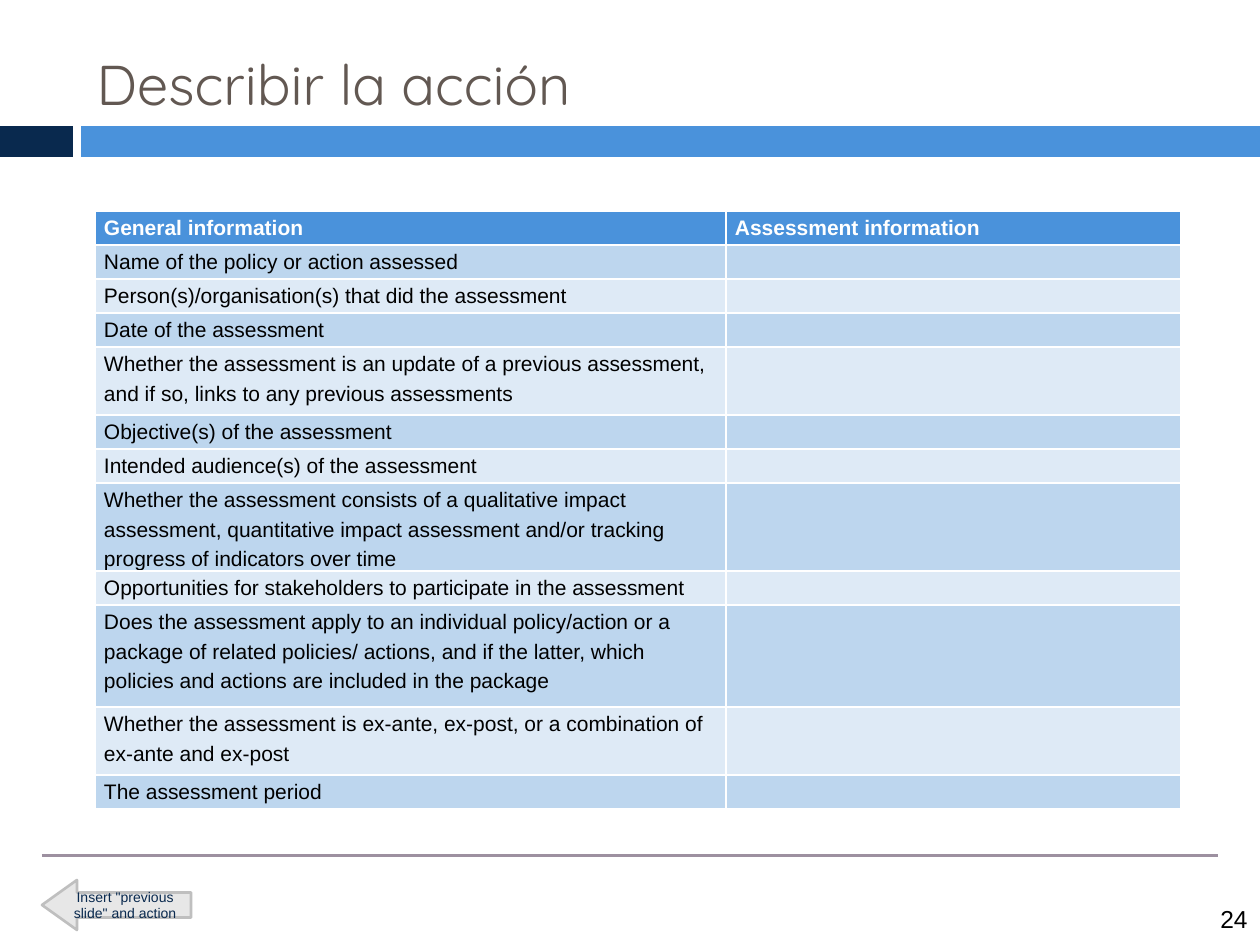
from dataclasses import dataclass

from lxml import etree
from pptx import Presentation, util as u
from pptx.dml.color import RGBColor
from pptx.enum import shapes, text
from pptx.oxml.ns import qn

SCALE = u.Inches(1) / 126
ROW = 34


@dataclass(frozen=True)
class Theme:
    """Colours, fonts and type sizes of the deck."""
    navy: str = "09294E"
    blue: str = "4A92DB"
    bands: tuple = ("BDD6EE", "DEEAF6")
    white: str = "FFFFFF"
    black: str = "000000"
    title: str = "625852"
    rule: str = "9D90A0"
    arrow: str = "E7E7E7"
    arrow_line: str = "BFBFBF"
    head_font: str = "Quicksand"
    body_font: str = "Arial"
    title_size: int = 32
    number_size: int = 14
    table_size: int = 12
    button_size: int = 8


THEME = Theme()
HEADER = ("General information", "Assessment information")
QUESTIONS = [
    ("Name of the policy or action assessed", 1),
    ("Person(s)/organisation(s) that did the assessment", 1),
    ("Date of the assessment", 1),
    ("Whether the assessment is an update of a previous assessment, "
     "and if so, links to any previous assessments", 2),
    ("Objective(s) of the assessment", 1),
    ("Intended audience(s) of the assessment", 1),
    ("Whether the assessment consists of a qualitative impact assessment, "
     "quantitative impact assessment and/or tracking progress of indicators over time", 2),
    ("Opportunities for stakeholders to participate in the assessment", 1),
    ("Does the assessment apply to an individual policy/action or a package of related "
     "policies/ actions, and if the latter, which policies and actions are included "
     "in the package", 3),
    ("Whether the assessment is ex-ante, ex-post, or a combination of "
     "ex-ante and ex-post", 2),
    ("The assessment period", 1),
]


def px(n):
    """Turn pixels into EMU."""
    return u.Emu(round(n * SCALE))


def rgb(value):
    """Turn a hex string into a colour."""
    return RGBColor.from_string(value)


def set_all(obj, **values):
    """Set each given attribute on an object."""
    for name, value in values.items():
        setattr(obj, name, value)


def write(tf, words, size, color, font=THEME.body_font, bold=False, **para):
    """Write one formatted paragraph into a text frame."""
    p = tf.paragraphs[0]
    set_all(p, **para)
    r = p.add_run()
    r.text = words
    set_all(r.font, size=u.Pt(size), name=font, bold=bold)
    r.font.color.rgb = rgb(color)


def add_block(slide, kind, box, fill, line=None):
    """Add a filled preset shape."""
    sp = slide.shapes.add_shape(kind, *map(px, box))
    sp.shadow.inherit = False
    sp.fill.solid()
    sp.fill.fore_color.rgb = rgb(fill)
    if line:
        sp.line.color.rgb = rgb(line)
        sp.line.width = u.Pt(1.5)
    else:
        sp.line.fill.background()
    return sp


def add_band(slide, box):
    """Add the two-part band under the title."""
    x, y, w, h = box
    tab, gap = 73, 8
    rect = shapes.MSO_SHAPE.RECTANGLE
    add_block(slide, rect, (x, y, tab, h), THEME.navy)
    add_block(slide, rect, (x + tab + gap, y, w - tab - gap, h), THEME.blue)


def add_title(slide, box, words):
    """Place and format the title placeholder."""
    sp = slide.shapes.title
    set_all(sp, **dict(zip(("left", "top", "width", "height"), map(px, box))))
    set_all(sp.text_frame, word_wrap=True, vertical_anchor=text.MSO_ANCHOR.MIDDLE)
    write(sp.text_frame, words, THEME.title_size, THEME.title, THEME.head_font,
          alignment=text.PP_ALIGN.LEFT, line_spacing=0.9)


def set_borders(cell):
    """Give a cell thin white borders on all sides."""
    pr = cell._tc.get_or_add_tcPr()
    for side in ("lnL", "lnR", "lnT", "lnB"):
        ln = etree.SubElement(pr, qn(f"a:{side}"), w=str(u.Pt(1)))
        fill = etree.SubElement(ln, qn("a:solidFill"))
        etree.SubElement(fill, qn("a:srgbClr"), val=THEME.white)


def fill_cell(cell, words, fill, color, bold):
    """Fill and write one table cell."""
    set_all(cell, margin_left=px(9), margin_right=px(9), margin_top=0, margin_bottom=0)
    set_borders(cell)
    cell.fill.solid()
    cell.fill.fore_color.rgb = rgb(fill)
    if words:
        write(cell.text_frame, words, THEME.table_size, color, bold=bold,
              line_spacing=1.25, space_after=u.Pt(2))
    else:
        etree.SubElement(cell.text_frame.paragraphs[0]._p, qn("a:endParaRPr"),
                         sz=str(THEME.table_size * 100))


def add_form(slide, box):
    """Add the two-column assessment table."""
    rows = [(HEADER, 1)] + [((q, ""), lines) for q, lines in QUESTIONS]
    table = slide.shapes.add_table(len(rows), 2, *map(px, box)).table
    for col, w in zip(table.columns, (631, box[2] - 631)):
        col.width = px(w)
    for i, (words, lines) in enumerate(rows):
        table.rows[i].height = px(ROW * lines)
        head = i == 0
        fill = THEME.blue if head else THEME.bands[(i - 1) % 2]
        for cell, t in zip(table.rows[i].cells, words):
            fill_cell(cell, t, fill, THEME.white if head else THEME.black, head)


def add_footer(slide, box, number):
    """Add the rule, the back arrow and the slide number."""
    x, y, w, h = box
    ln = slide.shapes.add_connector(shapes.MSO_CONNECTOR.STRAIGHT,
                                    *map(px, (x + 42, y, x + w - 42, y)))
    ln.line.color.rgb = rgb(THEME.rule)
    ln.line.width = u.Pt(1.75)
    etree.SubElement(ln._element.spPr, qn("a:effectLst"))

    flat = dict(margin_left=0, margin_right=0, margin_top=0, margin_bottom=0,
                vertical_anchor=text.MSO_ANCHOR.MIDDLE)
    sp = add_block(slide, shapes.MSO_SHAPE.LEFT_ARROW, (x + 42, y + 24, 149, 50),
                   THEME.arrow, THEME.arrow_line)
    sp.adjustments[0], sp.adjustments[1] = 0.5, 0.7
    set_all(sp.text_frame, word_wrap=True, **flat)
    write(sp.text_frame, 'Insert "previous slide" and action', THEME.button_size,
          THEME.navy, alignment=text.PP_ALIGN.CENTER)

    sp = slide.shapes.add_textbox(*map(px, (x + w - 52, y + h - 53, 52, 53)))
    set_all(sp.text_frame, word_wrap=False, **flat)
    write(sp.text_frame, number, THEME.number_size, THEME.black,
          alignment=text.PP_ALIGN.CENTER)


def main():
    """Build the slide and save it."""
    prs = Presentation()
    set_all(prs, slide_width=px(1260), slide_height=px(945))
    slide = prs.slides.add_slide(prs.slide_layouts[5])
    add_band(slide, (0, 126, 1260, 31))
    add_title(slide, (84, 38, 1140, 98), "Describir la acción")
    add_form(slide, (95, 211, 1086, 596))
    add_footer(slide, (0, 856, 1260, 89), "24")
    prs.save("out.pptx")


if __name__ == "__main__":
    main()
